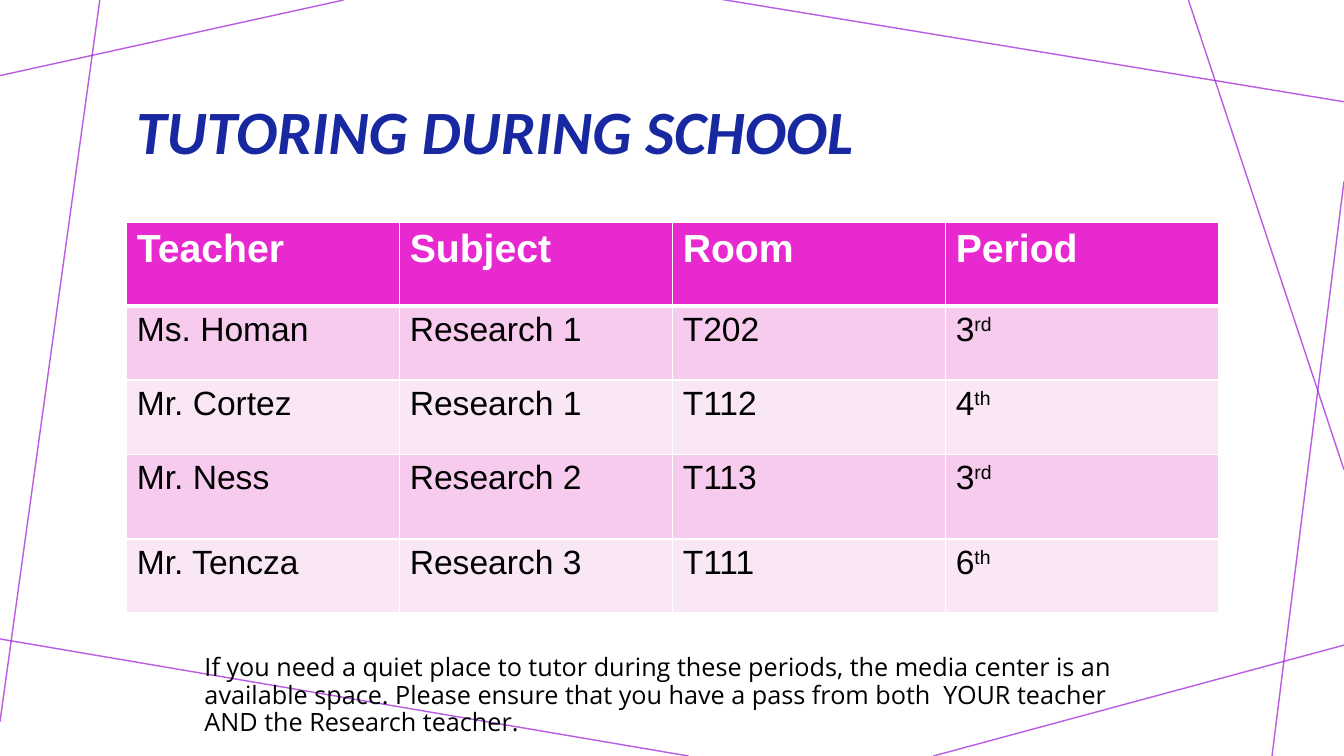
from dataclasses import dataclass

from lxml.etree import SubElement
from pptx import Presentation
from pptx.dml.color import RGBColor
from pptx.enum.shapes import MSO_CONNECTOR
from pptx.enum.text import MSO_ANCHOR, PP_ALIGN
from pptx.oxml.ns import qn
from pptx.util import Pt


@dataclass(frozen=True)
class Theme:
    title_color: str = "1728A0"
    line_color: str = "9D17D5"
    header_fill: str = "E729CF"
    band_fills: tuple = ("F6CBED", "FAE7F6")
    white: str = "FFFFFF"
    black: str = "000000"
    title_size: int = 44
    header_size: int = 28
    body_size: int = 24
    note_size: int = 18


THEME = Theme()

# Ends of the decorative lines: x1, y1, x2, y2 in points
FRAME_LINES = [
    (245.5, 0, 0, 54),
    (71.3, 0, 0, 515.5),
    (491.8, 540, -3.6, 455.8),
    (960, 460.8, 666.7, 540),
    (960, 129.6, 908.6, 540),
    (960, 335.5, 848.9, 0),
    (960, 72.7, 514, -0.7),
]

HEADERS = ["Teacher", "Subject", "Room", "Period"]
TUTORS = [
    ("Ms. Homan", "Research 1", "T202", "3", "rd"),
    ("Mr. Cortez", "Research 1", "T112", "4", "th"),
    ("Mr. Ness", "Research 2", "T113", "3", "rd"),
    ("Mr. Tencza", "Research 3", "T111", "6", "th"),
]
ROW_HEIGHTS = [60, 53, 53, 60.5, 53]
COLUMN_WIDTH = 195

NOTE = (
    "If you need a quiet place to tutor during these periods, the media center "
    "is an available space. Please ensure that you have a pass from both  YOUR "
    "teacher AND the Research teacher."
)


def set_all(target, values):
    for name, value in values.items():
        setattr(target, name, value)


def add_span(para, text, color, **font_values):
    span = para.add_run()
    span.text = text
    set_all(span.font, font_values)
    span.font.color.rgb = RGBColor.from_string(color)
    return span


def place(shape, left, top, width, height):
    set_all(shape, {"left": Pt(left), "top": Pt(top),
                    "width": Pt(width), "height": Pt(height)})


def add_frame_line(page, ends):
    line = page.shapes.add_connector(MSO_CONNECTOR.STRAIGHT, *map(Pt, ends))
    line.line.width = Pt(1)
    line.line.color.rgb = RGBColor.from_string(THEME.line_color)
    color = line._element.spPr.find(".//" + qn("a:srgbClr"))
    SubElement(color, qn("a:alpha"), val="70000")
    SubElement(line._element.spPr, qn("a:effectLst"))


def add_title(page, text):
    title = page.shapes.title
    place(title, 90, 42, 780, 108.7)
    set_all(title.text_frame, {"vertical_anchor": MSO_ANCHOR.MIDDLE, "word_wrap": True})
    para = title.text_frame.paragraphs[0]
    set_all(para, {"alignment": PP_ALIGN.LEFT, "line_spacing": 0.9})
    add_span(para, text, THEME.title_color, name="Calibri",
             size=Pt(THEME.title_size), bold=True, italic=True)


def format_cell(cell, fill, bottom_width):
    properties = cell._tc.get_or_add_tcPr()
    for side, width in zip("LRTB", (1, 1, 1, bottom_width)):
        border = SubElement(properties, qn(f"a:ln{side}"), w=str(Pt(width)))
        solid = SubElement(border, qn("a:solidFill"))
        SubElement(solid, qn("a:srgbClr"), val=THEME.white)
    cell.fill.solid()
    cell.fill.fore_color.rgb = RGBColor.from_string(fill)


def add_schedule(page):
    frame = page.shapes.add_table(
        len(TUTORS) + 1, len(HEADERS), Pt(90.5), Pt(158.5),
        Pt(COLUMN_WIDTH * len(HEADERS)), Pt(sum(ROW_HEIGHTS)))
    table = frame.table
    for column in table.columns:
        column.width = Pt(COLUMN_WIDTH)
    for row, height in zip(table.rows, ROW_HEIGHTS):
        row.height = Pt(height)

    # Header row
    for column, text in enumerate(HEADERS):
        cell = table.cell(0, column)
        format_cell(cell, THEME.header_fill, 3)
        add_span(cell.text_frame.paragraphs[0], text, THEME.white, name="Arial",
                 size=Pt(THEME.header_size), bold=True)

    # Tutor rows, with the ordinal ending raised
    body = {"name": "Arial", "size": Pt(THEME.body_size), "bold": False}
    for row, (*texts, ordinal) in enumerate(TUTORS, start=1):
        for column, text in enumerate(texts):
            cell = table.cell(row, column)
            format_cell(cell, THEME.band_fills[(row - 1) % 2], 1)
            add_span(cell.text_frame.paragraphs[0], text, THEME.black, **body)
        period = table.cell(row, len(HEADERS) - 1).text_frame.paragraphs[0]
        ending = add_span(period, ordinal, THEME.black, **body)
        ending._r.get_or_add_rPr().set("baseline", "30000")


def add_note(page, text):
    box = page.shapes.add_textbox(Pt(139), Pt(464.4), Pt(676), Pt(73))
    box.text_frame.word_wrap = True
    para = box.text_frame.paragraphs[0]
    para.line_spacing = 0.9
    add_span(para, text, THEME.black, name="Open Sans", size=Pt(THEME.note_size))


def main():
    deck = Presentation()
    set_all(deck, {"slide_width": Pt(960), "slide_height": Pt(540)})
    page = deck.slides.add_slide(deck.slide_layouts[5])
    for ends in FRAME_LINES:
        add_frame_line(page, ends)
    add_title(page, "TUTORING DURING SCHOOL")
    add_schedule(page)
    add_note(page, NOTE)
    deck.save("out.pptx")


if __name__ == "__main__":
    main()
